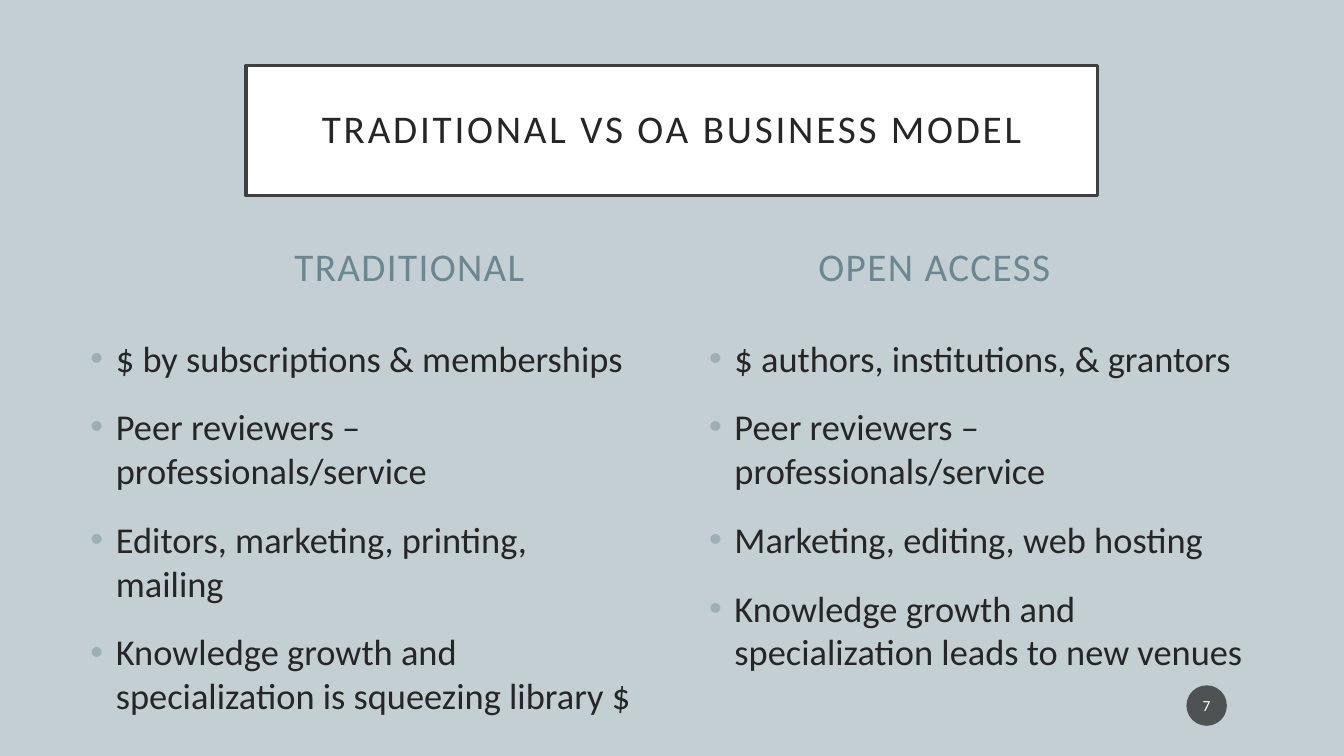
from dataclasses import dataclass

from lxml.etree import SubElement
from pptx import Presentation
from pptx.dml.color import RGBColor as Rgb
from pptx.enum.shapes import MSO_SHAPE as Shape
from pptx.enum.text import MSO_ANCHOR as Anchor, MSO_AUTO_SIZE as AutoSize, PP_ALIGN as Align
from pptx.oxml.ns import qn
from pptx.util import Cm, Pt

TITLE = "TRADITIONAL VS OA BUSINESS MODEL"
PAGE_NUMBER = "7"
COLUMNS = [
    ("TRADITIONAL", [
        "$ by subscriptions & memberships",
        "Peer reviewers – professionals/service",
        "Editors, marketing, printing, mailing",
        "Knowledge growth and specialization is squeezing library $",
    ]),
    ("OPEN ACCESS", [
        "$ authors, institutions, & grantors",
        "Peer reviewers – professionals/service",
        "Marketing, editing, web hosting",
        "Knowledge growth and specialization leads to new venues",
    ]),
]


@dataclass(frozen=True)
class Theme:
    font: str = "Calibri"
    background: str = "C3CFD3"
    panel: str = "FFFFFF"
    border: str = "404040"
    ink: str = "262626"
    heading: str = "6B8891"
    bullet: str = "9BAFB5"
    badge: str = "1D1D1D"
    badge_ink: str = "FFFFFF"
    title_size: float = 28
    heading_size: float = 28
    list_size: float = 26
    badge_size: float = 11


THEME = Theme()

# Lengths in centimetres
PAGE_WIDTH, PAGE_HEIGHT = 33.87, 19.05
TITLE_WIDTH, TITLE_HEIGHT, TITLE_TOP = 21.46, 3.28, 1.65
LIST_WIDTH, LIST_HEIGHT, LIST_TOP = 14.22, 8.94, 8.33
HEADING_WIDTH, HEADING_HEIGHT, HEADING_TOP = 11.86, 1.57, 5.84
GUTTER = 1.37
BADGE_LEFT, BADGE_TOP, BADGE_SIZE = 29.9, 17.27, 1.02
BULLET_INDENT = 0.64


def apply(target, values):
    for name, value in values.items():
        setattr(target, name, value)


def place(box, left, top, width, height):
    apply(box, {"left": Cm(left), "top": Cm(top), "width": Cm(width), "height": Cm(height)})


def set_frame(box, anchor, side=0.25, edge=0.13):
    apply(box.text_frame, {
        "word_wrap": True, "auto_size": AutoSize.NONE, "vertical_anchor": anchor,
        "margin_left": Cm(side), "margin_right": Cm(side),
        "margin_top": Cm(edge), "margin_bottom": Cm(edge),
    })


def write(para, text, size, color, tracking=0, **layout):
    """Put one formatted run in the paragraph; tracking is in points."""
    before, after = layout.pop("before", 0), layout.pop("after", 0)
    apply(para, {"line_spacing": 1.0, "space_before": Pt(before),
                 "space_after": Pt(after), **layout})
    span = para.add_run()
    span.text = text
    apply(span.font, {"name": THEME.font, "size": Pt(size), "bold": False})
    span.font.color.rgb = Rgb.from_string(color)
    if tracking:
        span._r.get_or_add_rPr().set("spc", str(tracking * 100))


def add_bullet(para):
    props = para._p.get_or_add_pPr()
    indent = Cm(BULLET_INDENT)
    props.set("marL", str(indent))
    props.set("indent", str(-indent))
    color = SubElement(props, qn("a:buClr"))
    SubElement(color, qn("a:srgbClr"), val=THEME.bullet)
    SubElement(props, qn("a:buFont"), typeface="Arial")
    SubElement(props, qn("a:buChar"), char="•")


def paint(box, color):
    box.fill.solid()
    box.fill.fore_color.rgb = Rgb.from_string(color)


def build_title(box):
    place(box, (PAGE_WIDTH - TITLE_WIDTH) / 2, TITLE_TOP, TITLE_WIDTH, TITLE_HEIGHT)
    set_frame(box, Anchor.MIDDLE, side=0.51, edge=0.51)
    paint(box, THEME.panel)
    box.line.color.rgb = Rgb.from_string(THEME.border)
    box.line.width = Pt(2.5)
    write(box.text_frame.paragraphs[0], TITLE, THEME.title_size, THEME.ink,
          tracking=2, alignment=Align.CENTER, line_spacing=0.9)


def build_heading(box, text, left):
    place(box, left, HEADING_TOP, HEADING_WIDTH, HEADING_HEIGHT)
    set_frame(box, Anchor.BOTTOM)
    write(box.text_frame.paragraphs[0], text, THEME.heading_size, THEME.heading,
          tracking=1, before=10, alignment=Align.CENTER)


def build_list(box, items, left):
    place(box, left, LIST_TOP, LIST_WIDTH, LIST_HEIGHT)
    set_frame(box, Anchor.TOP)
    frame = box.text_frame
    for number, item in enumerate(items):
        para = frame.add_paragraph() if number else frame.paragraphs[0]
        write(para, item, THEME.list_size, THEME.ink, before=6, after=12,
              alignment=Align.LEFT)
        add_bullet(para)


def build_badge(page):
    badge = page.shapes.add_shape(Shape.OVAL, Cm(BADGE_LEFT), Cm(BADGE_TOP),
                                  Cm(BADGE_SIZE), Cm(BADGE_SIZE))
    badge.shadow.inherit = False
    paint(badge, THEME.badge)
    tint = badge._element.spPr.find(qn("a:solidFill"))[0]
    SubElement(tint, qn("a:alpha"), val="70000")
    badge.line.fill.background()
    set_frame(badge, Anchor.MIDDLE, side=0.05)
    write(badge.text_frame.paragraphs[0], PAGE_NUMBER, THEME.badge_size,
          THEME.badge_ink, alignment=Align.CENTER)


def main():
    deck = Presentation()
    apply(deck, {"slide_width": Cm(PAGE_WIDTH), "slide_height": Cm(PAGE_HEIGHT)})
    page = deck.slides.add_slide(deck.slide_layouts.get_by_name("Comparison"))
    paint(page.background, THEME.background)

    build_title(page.shapes.title)
    center = PAGE_WIDTH / 2
    list_lefts = (center - GUTTER / 2 - LIST_WIDTH, center + GUTTER / 2)
    heading_lefts = (center - GUTTER / 2 - HEADING_WIDTH, center + GUTTER / 2)
    boxes = {box.placeholder_format.idx: box for box in page.placeholders}
    for number, (heading, items) in enumerate(COLUMNS):
        build_heading(boxes[1 + 2 * number], heading, heading_lefts[number])
        build_list(boxes[2 + 2 * number], items, list_lefts[number])
    build_badge(page)
    deck.save("out.pptx")


if __name__ == "__main__":
    main()
